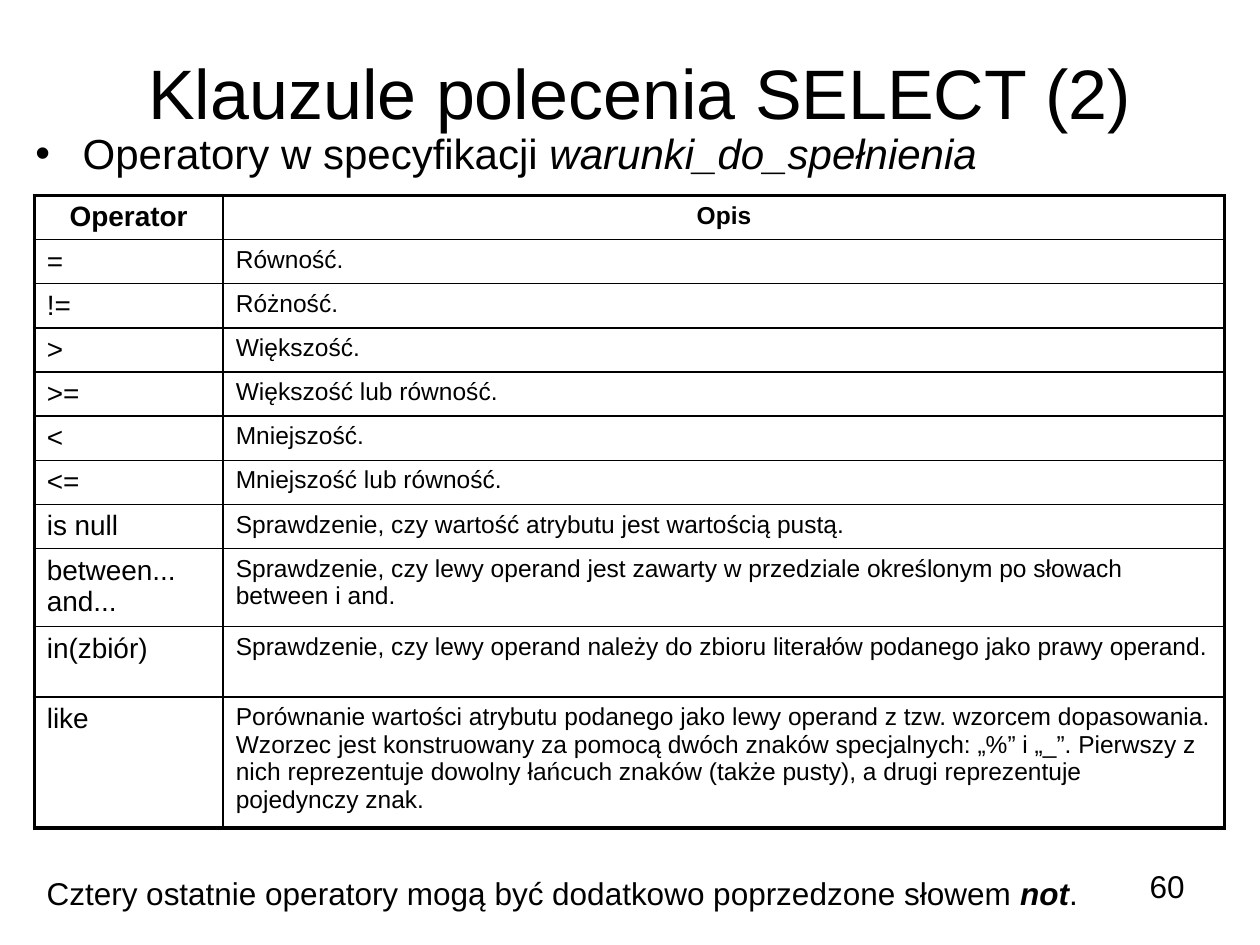
"""Build the slide listing the operators of the SELECT clause."""
from typing import NamedTuple

from lxml.etree import SubElement
from pptx import Presentation
from pptx.dml.color import RGBColor
from pptx.enum.text import MSO_ANCHOR, MSO_AUTO_SIZE, PP_ALIGN
from pptx.oxml.ns import qn
from pptx.util import Cm, Pt

BLACK = RGBColor(0, 0, 0)
FONT = "Arial"
OUTER, INNER = Pt(2.25), Pt(1)
COLUMN_WIDTHS = Cm(3.81), Cm(20.19)


class Box(NamedTuple):
    left: float
    top: float
    width: float
    height: float

    def lengths(self) -> list:
        return [Cm(value) for value in self]


class Operator(NamedTuple):
    symbol: str
    meaning: str
    height: float = 0.89


OPERATORS = [
    Operator("=", "Równość."),
    Operator("!=", "Różność."),
    Operator(">", "Większość."),
    Operator(">=", "Większość lub równość."),
    Operator("<", "Mniejszość."),
    Operator("<=", "Mniejszość lub równość."),
    Operator("is null", "Sprawdzenie, czy wartość atrybutu jest wartością pustą."),
    Operator("between... and...", "Sprawdzenie, czy lewy operand jest zawarty w przedziale "
             "określonym po słowach between i and.", 1.57),
    Operator("in(zbiór)", "Sprawdzenie, czy lewy operand należy do zbioru literałów "
             "podanego jako prawy operand.", 1.42),
    Operator("like", "Porównanie wartości atrybutu podanego jako lewy operand z tzw. wzorcem "
             "dopasowania. Wzorzec jest konstruowany za pomocą dwóch znaków specjalnych: "
             "„%” i „_”. Pierwszy z nich reprezentuje dowolny łańcuch znaków (także pusty), "
             "a drugi reprezentuje pojedynczy znak.", 2.64),
]


def write(frame, text: str, *, size: float, bold: bool = False, italic: bool = False,
          align=None) -> None:
    """Append formatted text to the first paragraph of a frame."""
    paragraph = frame.paragraphs[0]
    if align is not None:
        paragraph.alignment = align
    run = paragraph.add_run()
    run.text = text
    run.font.name, run.font.size = FONT, Pt(size)
    run.font.bold, run.font.italic = bold, italic
    run.font.color.rgb = BLACK


def place(holder, box: Box):
    """Move a placeholder and return its text frame."""
    holder.left, holder.top, holder.width, holder.height = box.lengths()
    holder.text_frame.auto_size = MSO_AUTO_SIZE.NONE
    return holder.text_frame


def add_text_frame(slide, box: Box):
    """Add a wrapping text box and return its text frame."""
    frame = slide.shapes.add_textbox(*box.lengths()).text_frame
    frame.word_wrap = True
    return frame


def set_borders(cell, **widths: int) -> None:
    """Draw black cell borders of the given widths."""
    properties = cell._tc.get_or_add_tcPr()
    for position, side in enumerate("LRTB"):
        line = SubElement(properties, qn(f"a:ln{side}"), w=str(widths[side]))
        fill = SubElement(line, qn("a:solidFill"))
        SubElement(fill, qn("a:srgbClr"), val=str(BLACK))
        properties.insert(position, line)


def add_operator_table(slide, box: Box) -> None:
    """Add the table of operators with a heavy outer frame."""
    rows = [Operator("Operator", "Opis"), *OPERATORS]
    table = slide.shapes.add_table(len(rows), 2, *box.lengths()).table
    table.first_row = table.horz_banding = False
    for column, width in zip(table.columns, COLUMN_WIDTHS):
        column.width = width
    for row_index, operator in enumerate(rows):
        table.rows[row_index].height = Cm(operator.height)
        header = row_index == 0
        for column_index, (text, size) in enumerate(
                [(operator.symbol, 16), (operator.meaning, 14)]):
            cell = table.cell(row_index, column_index)
            cell.fill.background()
            cell.vertical_anchor = MSO_ANCHOR.TOP
            set_borders(cell,
                        L=OUTER if column_index == 0 else INNER,
                        R=OUTER if column_index == 1 else INNER,
                        T=OUTER if header else INNER,
                        B=OUTER if row_index == len(rows) - 1 else INNER)
            write(cell.text_frame, text, size=size, bold=header,
                  align=PP_ALIGN.CENTER if header else PP_ALIGN.LEFT)


def main() -> None:
    """Build and save the slide."""
    presentation = Presentation()
    presentation.slide_width, presentation.slide_height = Cm(25.4), Cm(19.05)
    slide = presentation.slides.add_slide(presentation.slide_layouts[1])

    title = place(slide.shapes.title, Box(1.27, 0.76, 23.24, 2.16))
    write(title, "Klauzule polecenia SELECT (2)", size=40, align=PP_ALIGN.CENTER)

    topic = place(slide.placeholders[1], Box(0.46, 2.44, 23.44, 1.27))
    write(topic, "Operatory w specyfikacji ", size=24)
    write(topic, "warunki_do_spełnienia", size=24, italic=True)

    add_operator_table(slide, Box(0.69, 3.94, 24, 12.75))

    page_number = add_text_frame(slide, Box(18.21, 17.35, 5.92, 1.32))
    write(page_number, "60", size=18, align=PP_ALIGN.RIGHT)

    remark = add_text_frame(slide, Box(0.69, 17.65, 22.61, 0.86))
    remark.paragraphs[0].line_spacing = 0.8
    write(remark, "Cztery ostatnie operatory mogą być dodatkowo poprzedzone słowem ", size=18)
    write(remark, "not", size=18, bold=True, italic=True)
    write(remark, ".", size=18)

    presentation.save("out.pptx")


if __name__ == "__main__":
    main()
